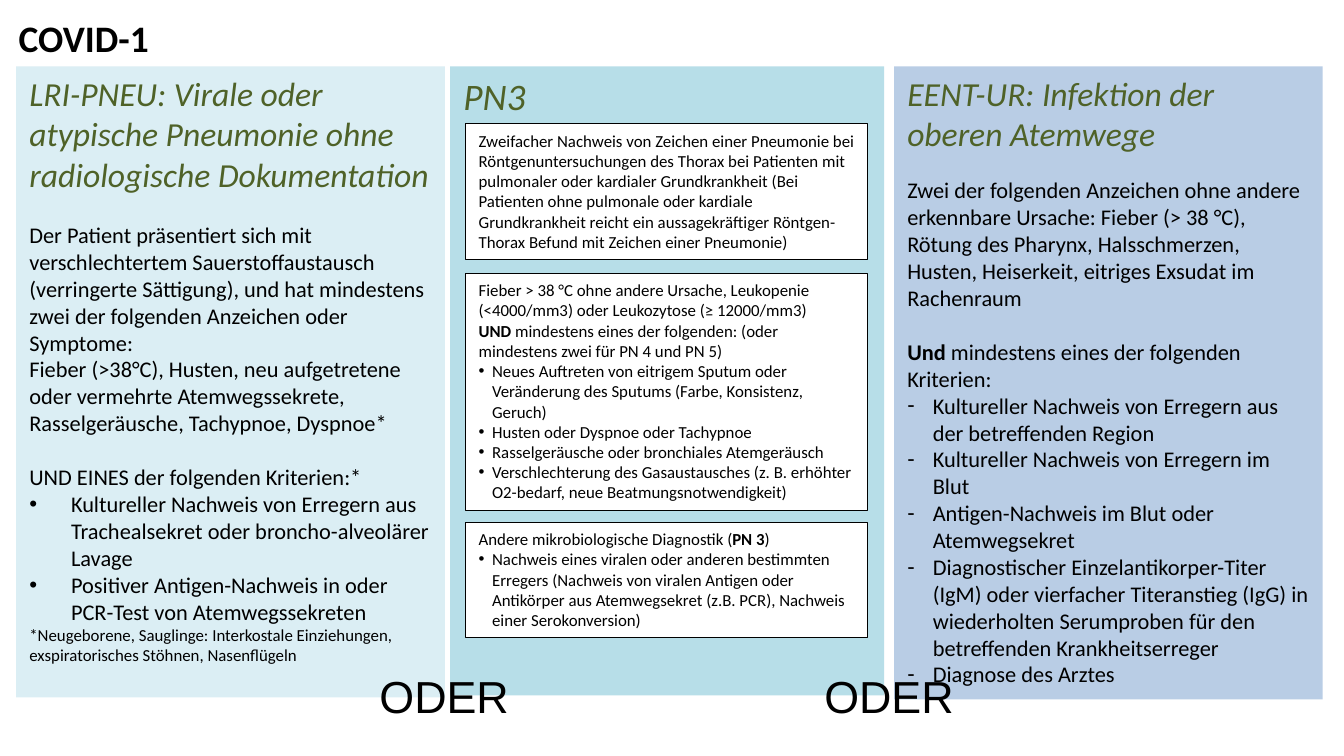
from collections import namedtuple

from lxml import etree
from pptx import Presentation
from pptx.dml.color import RGBColor
from pptx.enum.shapes import MSO_SHAPE
from pptx.enum.text import MSO_ANCHOR, PP_ALIGN
from pptx.oxml.ns import qn
from pptx.util import Inches, Pt

RECTANGLE = MSO_SHAPE.RECTANGLE
TOP = MSO_ANCHOR.TOP
LEFT = PP_ALIGN.LEFT
CENTER = PP_ALIGN.CENTER

BLACK = RGBColor(0x00, 0x00, 0x00)
WHITE = RGBColor(0xFF, 0xFF, 0xFF)
OLIVE = RGBColor(0x4F, 0x62, 0x28)
PALE_AQUA = RGBColor(0xDB, 0xEE, 0xF4)
AQUA = RGBColor(0xB7, 0xDE, 0xE8)
BLUE = RGBColor(0xB9, 0xCD, 0xE5)

SLIDE_WIDTH = Inches(10)
SLIDE_HEIGHT = SLIDE_WIDTH * 9 // 16
COLUMN = SLIDE_WIDTH / 100
ROW = SLIDE_HEIGHT / 100
PANEL_TOP = 8.78

Box = namedtuple("Box", "left top width height")
Style = namedtuple("Style", "size color bold italic font align",
                   defaults=(BLACK, False, False, "Calibri", LEFT))
Item = namedtuple("Item", "runs style bullet indent gap", defaults=(None, 0, 0))

TITLE = Style(20, bold=True)
HEADING = Style(18, OLIVE, italic=True)
SHORT_HEADING = Style(20, OLIVE, italic=True)
BODY = Style(12)
SMALL = Style(9)
OR_LABEL = Style(24, font="Arial", align=CENTER)

LEFT_ITEMS = [
    Item("LRI-PNEU: Virale oder atypische Pneumonie ohne radiologische Dokumentation", HEADING),
    Item("Der Patient präsentiert sich mit verschlechtertem Sauerstoffaustausch (verringerte "
         "Sättigung), und hat mindestens zwei der folgenden Anzeichen oder Symptome:",
         BODY, gap=14.6),
    Item("Fieber (>38°C), Husten, neu aufgetretene oder vermehrte Atemwegssekrete, "
         "Rasselgeräusche, Tachypnoe, Dyspnoe*", BODY),
    Item("UND EINES der folgenden Kriterien:*", BODY, gap=14.6),
    Item("Kultureller Nachweis von Erregern aus Trachealsekret oder broncho-alveolärer Lavage",
         BODY, "•", 0.31),
    Item("Positiver Antigen-Nachweis in oder PCR-Test von Atemwegssekreten", BODY, "•", 0.31),
    Item("*Neugeborene, Sauglinge: Interkostale Einziehungen, exspiratorisches Stöhnen, "
         "Nasenflügeln", SMALL),
]

RIGHT_ITEMS = [
    Item("EENT-UR: Infektion der oberen Atemwege", HEADING),
    Item("Zwei der folgenden Anzeichen ohne andere erkennbare Ursache: Fieber (> 38 °C), Rötung "
         "des Pharynx, Halsschmerzen, Husten, Heiserkeit, eitriges Exsudat im Rachenraum",
         BODY, gap=12.2),
    Item([("Und ", True), ("mindestens eines der folgenden Kriterien:", False)], BODY, gap=14.6),
] + [Item(text, BODY, "-", 0.19) for text in (
    "Kultureller Nachweis von Erregern aus der betreffenden Region",
    "Kultureller Nachweis von Erregern im Blut",
    "Antigen-Nachweis im Blut oder Atemwegsekret",
    "Diagnostischer Einzelantikorper-Titer (IgM) oder vierfacher Titeranstieg (IgG) in "
    "wiederholten Serumproben für den betreffenden Krankheitserreger",
    "Diagnose des Arztes",
)]

XRAY_ITEMS = [
    Item("Zweifacher Nachweis von Zeichen einer Pneumonie bei Röntgenuntersuchungen des Thorax "
         "bei Patienten mit pulmonaler oder kardialer Grundkrankheit (Bei Patienten ohne "
         "pulmonale oder kardiale Grundkrankheit reicht ein aussagekräftiger Röntgen-Thorax "
         "Befund mit Zeichen einer Pneumonie)", SMALL),
]

SYMPTOM_ITEMS = [
    Item("Fieber > 38 °C ohne andere Ursache, Leukopenie (<4000/mm3) oder Leukozytose "
         "(≥ 12000/mm3)", SMALL),
    Item([("UND", True),
          (" mindestens eines der folgenden: (oder mindestens zwei für PN 4 und PN 5)", False)],
         SMALL),
] + [Item(text, SMALL, "•", 0.1) for text in (
    "Neues Auftreten von eitrigem Sputum oder Veränderung des Sputums (Farbe, Konsistenz, Geruch)",
    "Husten oder Dyspnoe oder Tachypnoe",
    "Rasselgeräusche oder bronchiales Atemgeräusch",
    "Verschlechterung des Gasaustausches (z. B. erhöhter O2-bedarf, neue Beatmungsnotwendigkeit)",
)]

MICROBIOLOGY_ITEMS = [
    Item([("Andere mikrobiologische Diagnostik (", False), ("PN 3", True), (")", False)], SMALL),
    Item("Nachweis eines viralen oder anderen bestimmten Erregers (Nachweis von viralen Antigen "
         "oder Antikörper aus Atemwegsekret (z.B. PCR), Nachweis einer Serokonversion)",
         SMALL, "•", 0.1),
]

CRITERIA = [
    (7.6, 17.96, XRAY_ITEMS),
    (27.38, 31.4, SYMPTOM_ITEMS),
    (60.3, 15.29, MICROBIOLOGY_ITEMS),
]


def to_lengths(box):
    return (int(box.left * COLUMN), int(box.top * ROW),
            int(box.width * COLUMN), int(box.height * ROW))


def add_bullet(paragraph, character, indent):
    properties = paragraph._p.get_or_add_pPr()
    properties.set("marL", str(Inches(indent)))
    properties.set("indent", str(-Inches(indent)))
    etree.SubElement(properties, qn("a:buFont")).set("typeface", "Arial")
    etree.SubElement(properties, qn("a:buChar")).set("char", character)


def write_items(text_frame, items):
    text_frame.vertical_anchor = TOP
    for index, item in enumerate(items):
        paragraph = text_frame.add_paragraph() if index else text_frame.paragraphs[0]
        style = item.style
        paragraph.alignment = style.align
        paragraph.space_before = Pt(item.gap)
        if item.bullet:
            add_bullet(paragraph, item.bullet, item.indent)
        font = paragraph.font
        font.name = style.font
        font.size = Pt(style.size)
        font.italic = style.italic
        font.color.rgb = style.color
        if isinstance(item.runs, str):
            font.bold = style.bold
            paragraph.add_run().text = item.runs
        else:
            for text, bold in item.runs:
                run = paragraph.add_run()
                run.text = text
                run.font.bold = bold


def add_label(slide, box, text, style):
    shape = slide.shapes.add_textbox(*to_lengths(box))
    shape.text_frame.word_wrap = False
    write_items(shape.text_frame, [Item(text, style)])


def add_panel(slide, box, fill, items, outline=None):
    shape = slide.shapes.add_shape(RECTANGLE, *to_lengths(box))
    shape.shadow.inherit = False
    shape.fill.solid()
    shape.fill.fore_color.rgb = fill
    if outline is None:
        shape.line.fill.background()
    else:
        shape.line.color.rgb = outline
        shape.line.width = Pt(0.75)
    shape.text_frame.word_wrap = True
    write_items(shape.text_frame, items)


def add_pneumonia_panel(slide, box):
    add_panel(slide, box, AQUA, [Item("PN3", SHORT_HEADING)])
    for offset, height, items in CRITERIA:
        inner = Box(box.left + 1.13, box.top + offset, box.width - 2.4, height)
        add_panel(slide, inner, WHITE, items, BLACK)


def main():
    presentation = Presentation()
    presentation.slide_width = SLIDE_WIDTH
    presentation.slide_height = SLIDE_HEIGHT
    slide = presentation.slides.add_slide(presentation.slide_layouts[6])
    add_label(slide, Box(0.4, 1.07, 12.8, 7.82), "COVID-19", TITLE)
    add_panel(slide, Box(1.2, PANEL_TOP, 31.9, 83.5), PALE_AQUA, LEFT_ITEMS)
    add_pneumonia_panel(slide, Box(33.5, PANEL_TOP, 32.3, 83.2))
    for left in (27.2, 60.3):
        if left > 60:
            add_panel(slide, Box(66.52, PANEL_TOP, 31.9, 83.73), BLUE, RIGHT_ITEMS)
        add_label(slide, Box(left, 87.64, 11.7, 8.89), "ODER", OR_LABEL)
    presentation.save("out.pptx")


if __name__ == "__main__":
    main()
